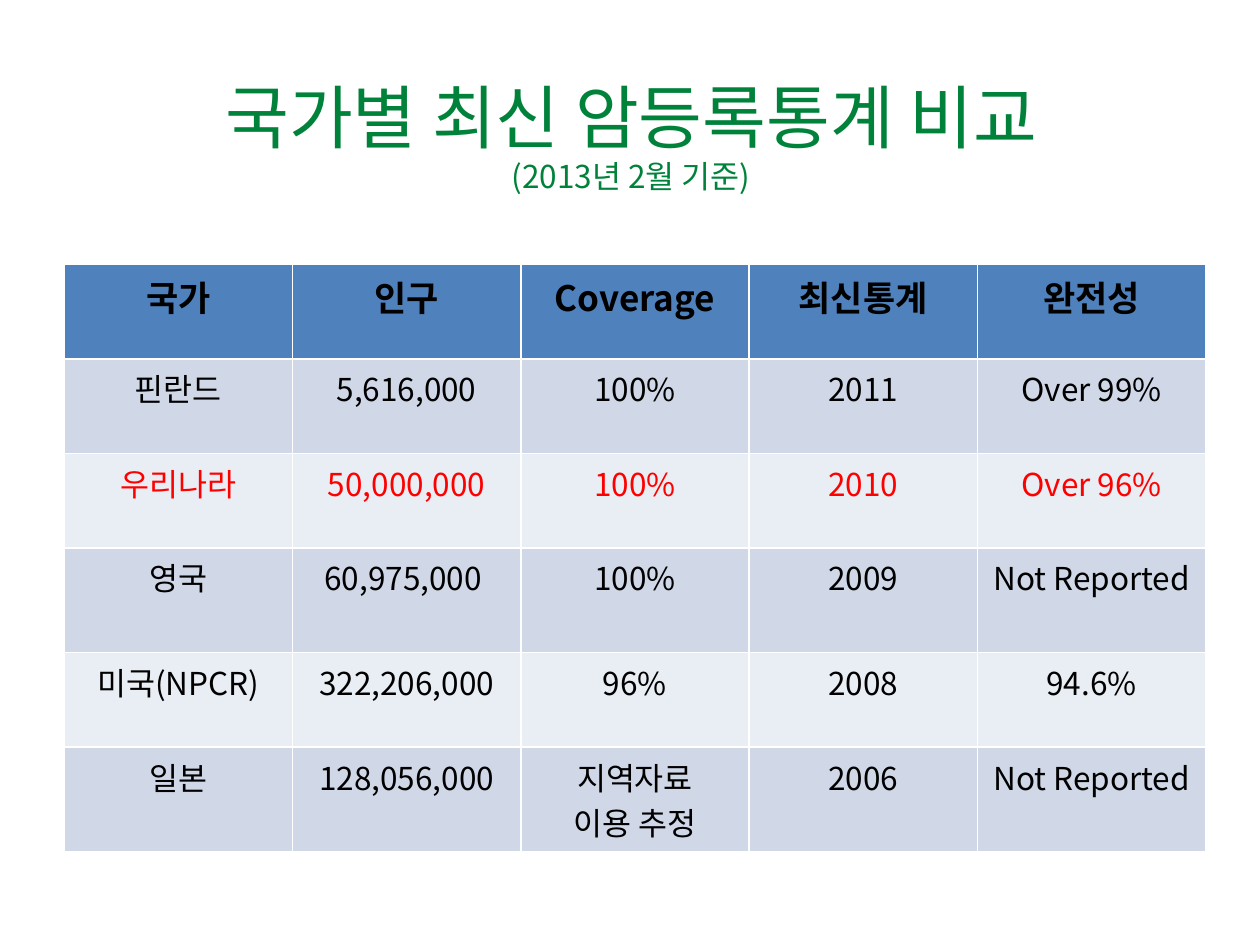
from lxml import etree
from pptx import Presentation
from pptx.dml.color import RGBColor
from pptx.enum.text import MSO_ANCHOR, MSO_AUTO_SIZE, PP_ALIGN
from pptx.oxml.ns import qn
from pptx.util import Inches, Pt

CENTER = PP_ALIGN.CENTER
MIDDLE = MSO_ANCHOR.MIDDLE
FIXED = MSO_AUTO_SIZE.NONE
FONT = "Noto Sans CJK KR"
GREEN, BLACK, RED, WHITE = "00823B", "000000", "FF0000", "FFFFFF"
HEAD, BANDS = "4F81BD", ("E9EDF4", "D0D8E8")
LEFT = 0.51

ROWS = [
    ("국가", "인구", "Coverage", "최신통계", "완전성"),
    ("핀란드", "5,616,000", "100%", "2011", "Over 99%"),
    ("우리나라", "50,000,000", "100%", "2010", "Over 96%"),
    ("영국", "60,975,000 ", "100%", "2009", "Not Reported"),
    ("미국(NPCR)", "322,206,000", "96%", "2008", "94.6%"),
    ("일본", "128,056,000", "지역자료\n이용 추정", "2006", "Not Reported"),
]
HEIGHTS = (0.75, 0.75, 0.75, 0.83, 0.75, 0.83)
HOME_ROW = 2


def color(code):
    return RGBColor.from_string(code)


def add_run(para, text, size, code, bold=False):
    para.alignment = CENTER
    run = para.add_run()
    run.text = text
    font = run.font
    font.size, font.bold = Pt(size), bold
    font.color.rgb = color(code)
    font.name = FONT
    etree.SubElement(font._element, qn("a:ea"), typeface=FONT)


def add_title(slide):
    title = slide.shapes.title
    title.left, title.top = Inches(LEFT), Inches(0.6)
    title.width, title.height = Inches(9), Inches(0.93)
    frame = title.text_frame
    frame.auto_size, frame.vertical_anchor = FIXED, MIDDLE
    para = frame.paragraphs[0]
    add_run(para, "국가별 최신 암등록통계 비교", 39.6, GREEN)
    para.add_line_break()
    add_run(para, "(2013년 2월 기준)", 18, GREEN)


def add_border(cell):
    props = cell._tc.get_or_add_tcPr()
    for side in ("lnL", "lnR", "lnT", "lnB"):
        line = etree.SubElement(props, qn("a:" + side), w=str(Pt(1)))
        fill = etree.SubElement(line, qn("a:solidFill"))
        etree.SubElement(fill, qn("a:srgbClr"), val=WHITE)


def fill_cell(cell, text, row):
    add_border(cell)
    cell.fill.solid()
    cell.fill.fore_color.rgb = color(BANDS[row % 2] if row else HEAD)
    frame = cell.text_frame
    for i, line in enumerate(text.split("\n")):
        para = frame.add_paragraph() if i else frame.paragraphs[0]
        add_run(para, line, 18 if row else 20,
                RED if row == HOME_ROW else BLACK, bold=row == 0)


def add_grid(slide):
    count = len(ROWS[0])
    width = Inches(9.06)
    table = slide.shapes.add_table(
        len(ROWS), count, Inches(LEFT), Inches(2.1),
        width, Inches(sum(HEIGHTS))).table
    for col in table.columns:
        col.width = width // count
    for r, (texts, height) in enumerate(zip(ROWS, HEIGHTS)):
        table.rows[r].height = Inches(height)
        for c, text in enumerate(texts):
            fill_cell(table.cell(r, c), text, r)


def main():
    deck = Presentation()
    deck.slide_width, deck.slide_height = Inches(10), Inches(7.5)
    slide = deck.slides.add_slide(deck.slide_layouts[5])
    add_title(slide)
    add_grid(slide)
    deck.save("out.pptx")


if __name__ == "__main__":
    main()
